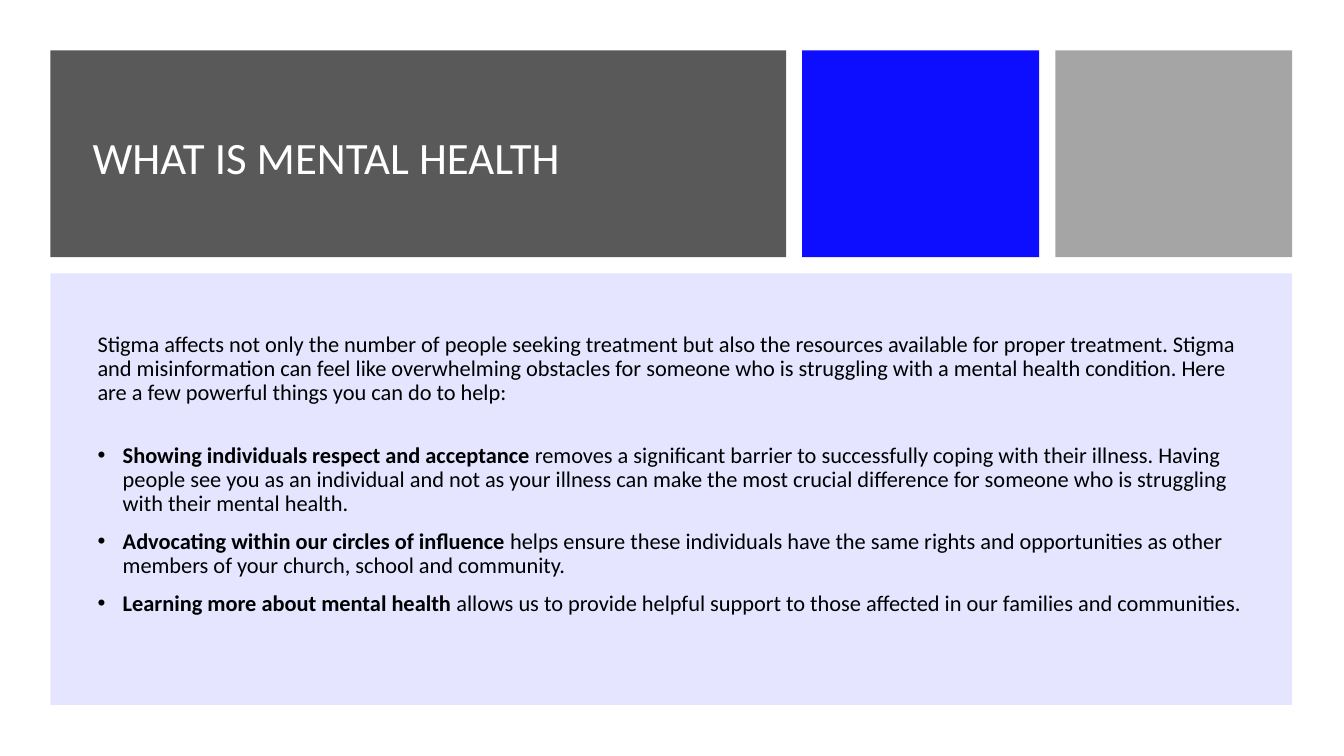
from lxml.etree import SubElement
from pptx import Presentation
from pptx.dml.color import RGBColor
from pptx.enum.shapes import MSO_SHAPE
from pptx.enum.text import MSO_ANCHOR, MSO_AUTO_SIZE, PP_ALIGN
from pptx.oxml.ns import qn
from pptx.util import Pt

COLORS = {
    "white": "FFFFFF",
    "black": "000000",
    "charcoal": "595959",
    "blue": "0000FF",
    "grey": "A5A5A5",
    "lavender": "8080FF",
}
FONT = "Calibri"
TITLE = "WHAT IS MENTAL HEALTH"
INTRO = (
    "Stigma affects not only the number of people seeking treatment but also the "
    "resources available for proper treatment. Stigma and misinformation can feel "
    "like overwhelming obstacles for someone who is struggling with a mental health "
    "condition. Here are a few powerful things you can do to help:"
)
ACTIONS = [
    ("Showing individuals respect and acceptance",
     " removes a significant barrier to successfully coping with their illness. "
     "Having people see you as an individual and not as your illness can make the "
     "most crucial difference for someone who is struggling with their mental health."),
    ("Advocating within our circles of influence",
     " helps ensure these individuals have the same rights and opportunities as "
     "other members of your church, school and community."),
    ("Learning more about mental health",
     " allows us to provide helpful support to those affected in our families and "
     "communities."),
]


def add_panel(slide, left, top, width, height, color, opacity=100):
    panel = slide.shapes.add_shape(
        MSO_SHAPE.RECTANGLE, Pt(left), Pt(top), Pt(width), Pt(height))
    panel.shadow.inherit = False
    panel.line.fill.background()
    panel.fill.solid()
    panel.fill.fore_color.rgb = RGBColor.from_string(COLORS[color])
    if opacity < 100:
        fill_color = panel.element.spPr.find(qn("a:solidFill"))[0]
        SubElement(fill_color, qn("a:alpha"), val=str(opacity * 1000))


def style_paragraph(paragraph, size, color, space_before=0):
    paragraph.alignment = PP_ALIGN.LEFT
    paragraph.line_spacing = 0.9
    paragraph.space_before = Pt(space_before)
    paragraph.font.name = FONT
    paragraph.font.size = Pt(size)
    paragraph.font.color.rgb = RGBColor.from_string(COLORS[color])


def prepare_frame(frame):
    frame.word_wrap = True
    frame.auto_size = MSO_AUTO_SIZE.NONE
    frame.vertical_anchor = MSO_ANCHOR.MIDDLE


def place_title(slide):
    title = slide.shapes.title
    title.left, title.top, title.width, title.height = (
        Pt(59), Pt(58.3), Pt(479.5), Pt(112.3))
    title.element.getparent().append(title.element)
    prepare_frame(title.text_frame)
    title.text_frame.text = TITLE
    style_paragraph(title.text_frame.paragraphs[0], 32, "white")


def add_action(frame, lead, detail, space_before):
    action = frame.add_paragraph()
    style_paragraph(action, 16, "black", space_before)
    properties = action._p.get_or_add_pPr()
    properties.set("marL", str(Pt(18)))
    properties.set("indent", str(-Pt(18)))
    bullet_font = SubElement(properties, qn("a:buFont"), typeface="Arial")
    bullet_font.addnext(properties.makeelement(qn("a:buChar"), {"char": "•"}))
    properties.append(properties.find(qn("a:defRPr")))
    lead_run = action.add_run()
    lead_run.text = lead
    lead_run.font.bold = True
    action.add_run().text = detail


def add_body(slide):
    frame = slide.shapes.add_textbox(
        Pt(62.6), Pt(220.3), Pt(834.5), Pt(258.5)).text_frame
    prepare_frame(frame)
    frame.margin_bottom = Pt(24.5)
    intro = frame.paragraphs[0]
    intro.text = INTRO
    style_paragraph(intro, 16, "black", 10)
    for index, (lead, detail) in enumerate(ACTIONS):
        add_action(frame, lead, detail, 10 if index else 27.5)


def main():
    presentation = Presentation()
    presentation.slide_width, presentation.slide_height = Pt(960), Pt(540)
    slide = presentation.slides.add_slide(presentation.slide_layouts[5])
    add_panel(slide, 36, 36, 525.6, 147.6, "charcoal")
    place_title(slide)
    add_panel(slide, 573, 36, 169.2, 147.6, "blue", 95)
    add_panel(slide, 753.8, 36, 169.2, 147.6, "grey")
    add_panel(slide, 36, 195.3, 887, 308.3, "lavender", 20)
    add_body(slide)
    presentation.save("out.pptx")


if __name__ == "__main__":
    main()
